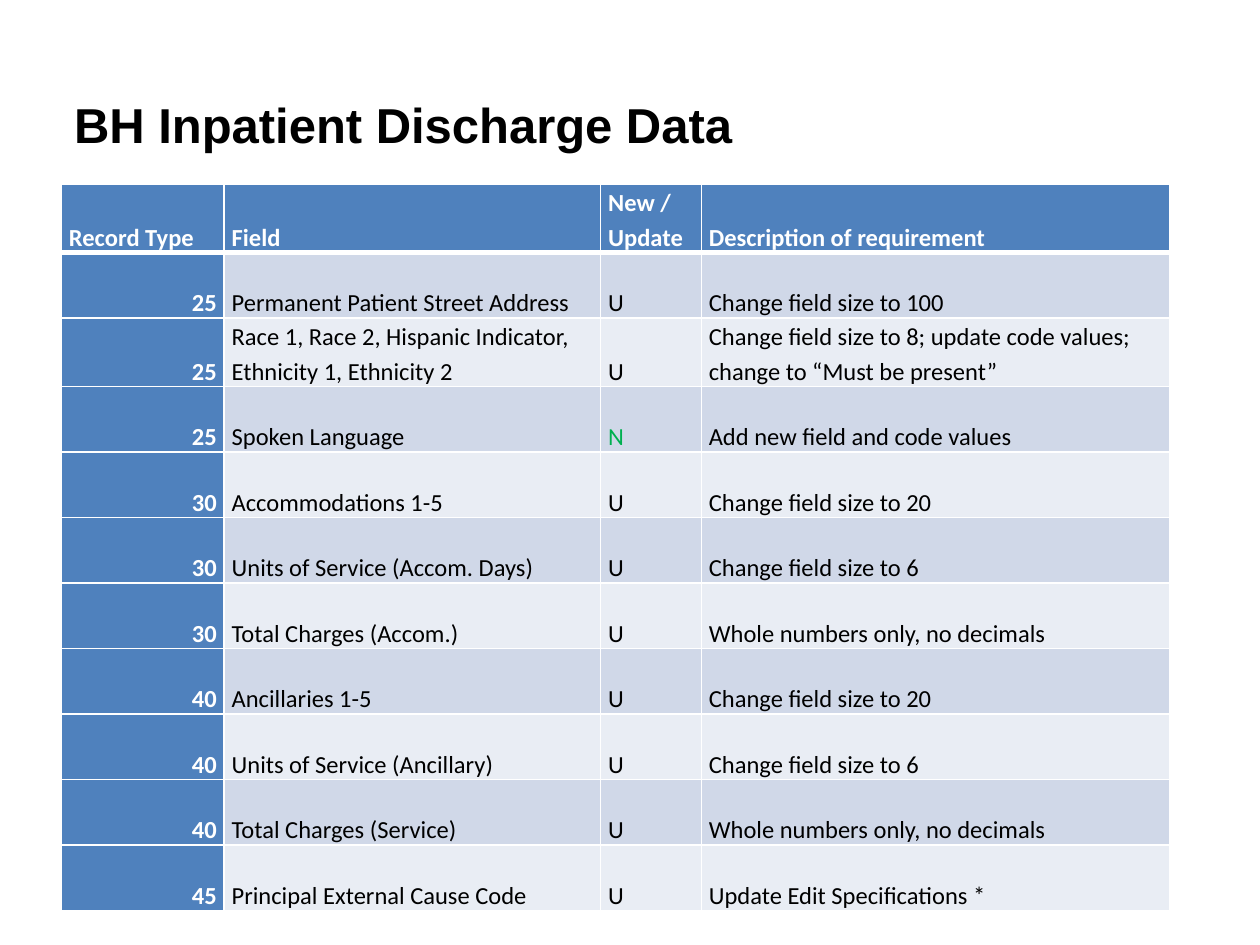
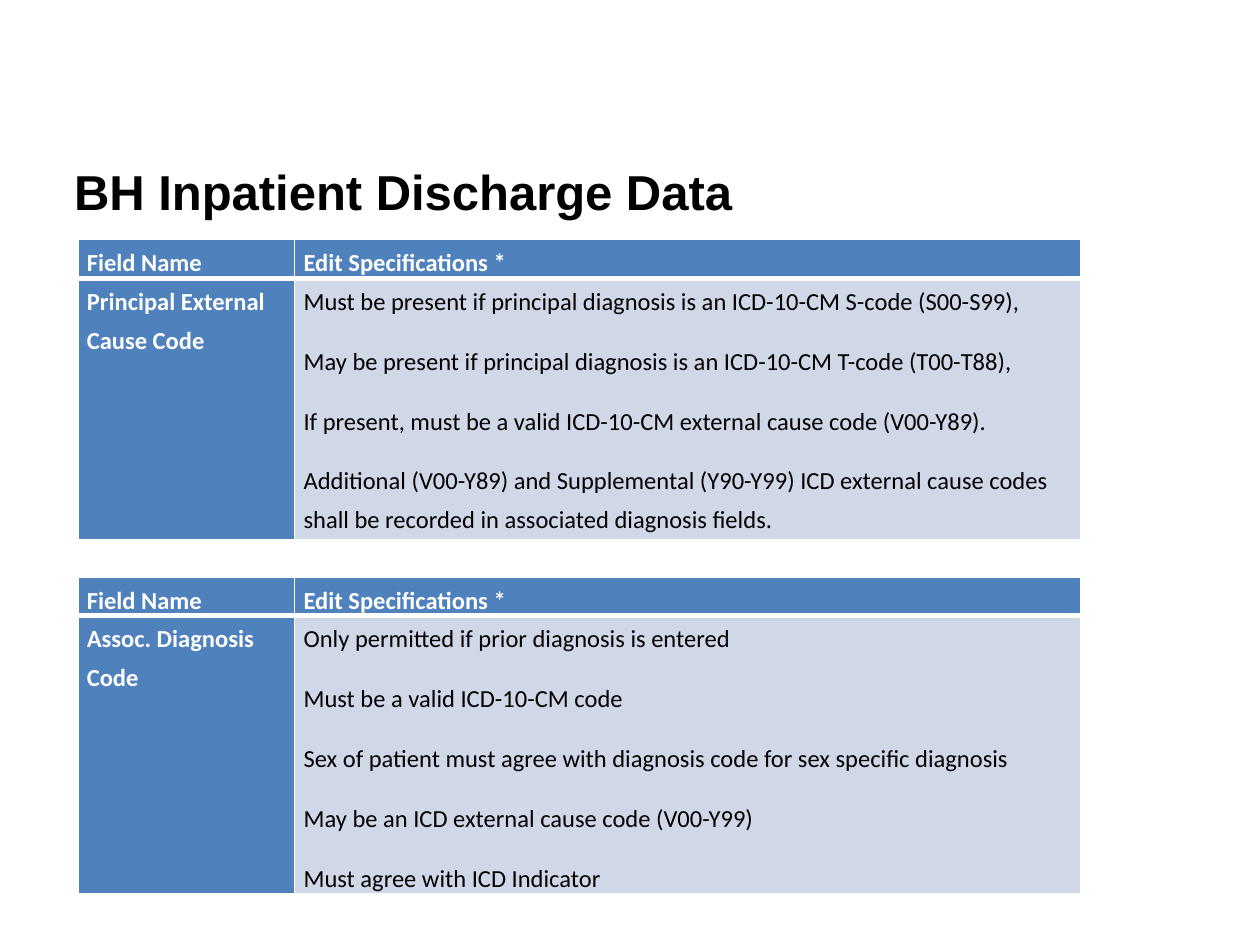
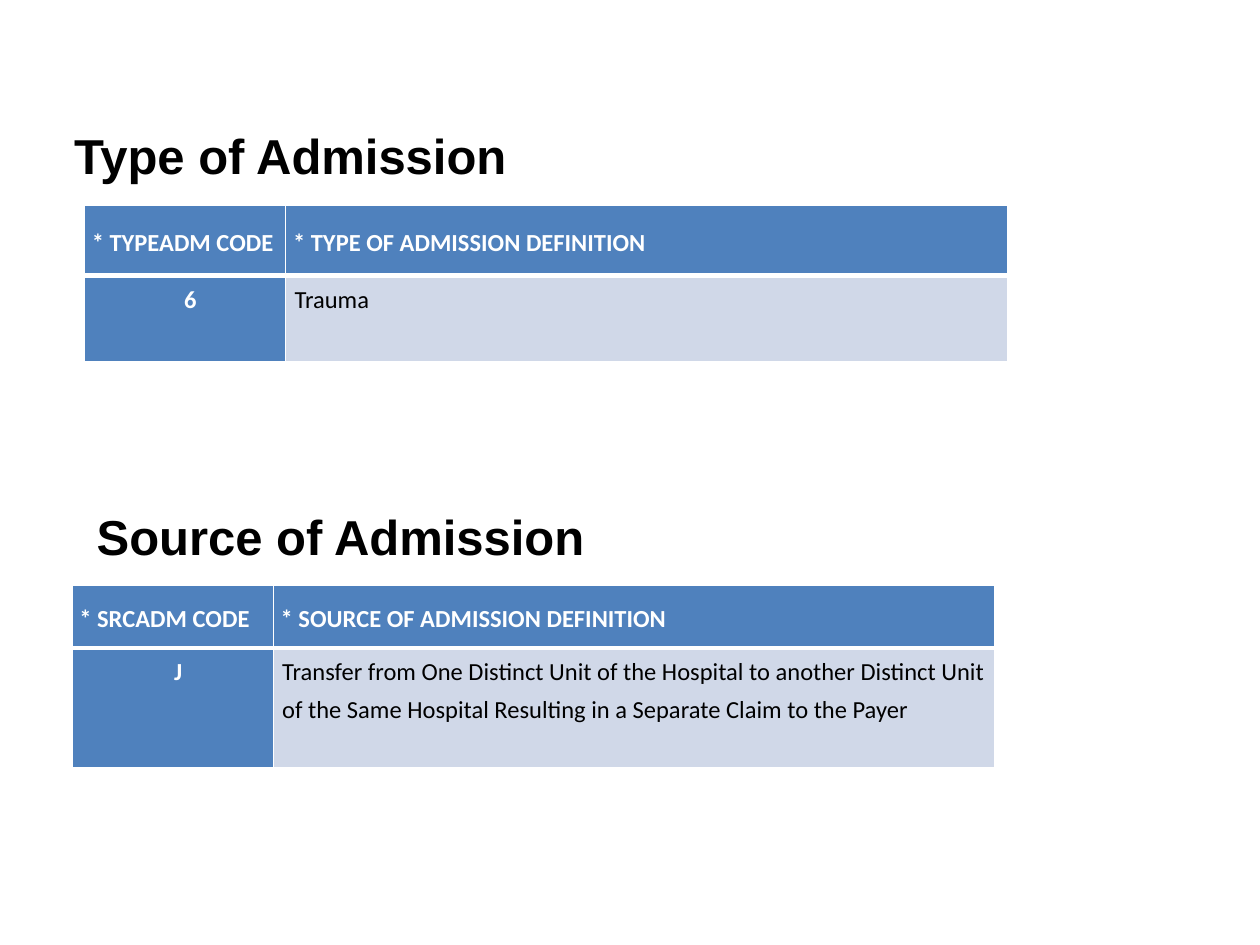
from dataclasses import dataclass

from lxml.etree import SubElement
from pptx import Presentation
from pptx.dml.color import RGBColor
from pptx.enum.text import MSO_ANCHOR as Anchor, MSO_AUTO_SIZE as AutoSize, PP_ALIGN as Align
from pptx.oxml.ns import qn
from pptx.slide import Slide
from pptx.table import _Cell as Cell
from pptx.text.text import TextFrame, _Paragraph as Paragraph
from pptx.util import Cm, Pt


@dataclass(frozen=True)
class Theme:
    heading_font: str = "Arial"
    table_font: str = "Calibri"
    heading_size: int = 28
    table_size: int = 14
    ink: str = "000000"
    paper: str = "FFFFFF"
    accent: str = "4F81BD"
    bands: tuple[str, str] = ("D0D8E8", "E9EDF4")
    new_field: str = "00B050"
    rule: int = 1
    header_rule: int = 3


THEME = Theme()
NEW_FLAG = "N"


@dataclass(frozen=True)
class CellLook:
    """Insets are in cm, paragraph spacing in points."""
    anchor: Anchor = Anchor.TOP
    line_spacing: float = 1.3
    before: int = 3
    after: int = 9
    inset: float = 0.18
    key_inset: float = 0.18
    key_align: Align = Align.LEFT


FIELD_LIST = CellLook(Anchor.BOTTOM, 1.15, 0, 0, 0.15, 0.15, Align.RIGHT)
EDIT_RULES = CellLook()
CODE_HEADER = CellLook(Anchor.MIDDLE, 1.15, 0, 0, 0.15, 0.15)
CODE_BODY = CellLook(after=3, key_inset=0.4, key_align=Align.CENTER)


@dataclass(frozen=True)
class Grid:
    """A table with a header row and a key column; lengths are in cm."""
    left: float
    top: float
    widths: tuple[float, ...]
    header_height: float
    row_height: float
    header: tuple[str, ...]
    rows: tuple[tuple[str, ...], ...]
    header_look: CellLook
    body_look: CellLook


@dataclass(frozen=True)
class Heading:
    """Place of a heading; lengths are in cm."""
    text: str
    left: float
    top: float
    width: float
    height: float
    anchor: Anchor = Anchor.MIDDLE
    bottom_inset: float = 0.13


@dataclass(frozen=True)
class Page:
    title: Heading
    grids: tuple[Grid, ...]
    subheadings: tuple[Heading, ...] = ()


def title(text: str, top: float, height: float, bottom_inset: float = 0.13) -> Heading:
    return Heading(text, 1.24, top, 22.33, height, bottom_inset=bottom_inset)


def edit_grid(top: float, row_height: float, field: str, *rules: str) -> Grid:
    return Grid(1.57, top, (4.37, 15.85), 0.74, row_height,
                ("Field Name", "Edit Specifications *"),
                ((field, "\n".join(rules)),), EDIT_RULES, EDIT_RULES)


def code_grid(left: float, top: float, header_height: float, row_height: float,
              header: tuple[str, str], row: tuple[str, str]) -> Grid:
    return Grid(left, top, (4.06, 14.55), header_height, row_height,
                header, (row,), CODE_HEADER, CODE_BODY)


DISCHARGE_TITLE = "BH Inpatient Discharge Data"

PAGES = (
    Page(
        title(DISCHARGE_TITLE, 0.74, 3.53),
        (Grid(
            1.24, 3.71, (3.28, 7.59, 2.03, 9.45), 1.32, 1.32,
            ("Record Type", "Field", "New / Update", "Description of requirement"),
            (
                ("25", "Permanent Patient Street Address", "U", "Change field size to 100"),
                ("25", "Race 1, Race 2, Hispanic Indicator, Ethnicity 1, Ethnicity 2", "U",
                 "Change field size to 8; update code values; change to “Must be present”"),
                ("25", "Spoken Language", NEW_FLAG, "Add new field and code values"),
                ("30", "Accommodations 1-5", "U", "Change field size to 20"),
                ("30", "Units of Service (Accom. Days)", "U", "Change field size to 6"),
                ("30", "Total Charges (Accom.)", "U", "Whole numbers only, no decimals"),
                ("40", "Ancillaries 1-5", "U", "Change field size to 20"),
                ("40", "Units of Service (Ancillary)", "U", "Change field size to 6"),
                ("40", "Total Charges (Service)", "U", "Whole numbers only, no decimals"),
                ("45", "Principal External Cause Code", "U", "Update Edit Specifications *"),
            ),
            CellLook(Anchor.BOTTOM, 1.15, 0, 0, 0.15, 0.15), FIELD_LIST),),
    ),
    Page(
        title(DISCHARGE_TITLE, 2.97, 1.78),
        (
            edit_grid(
                4.83, 5.26, "Principal External Cause Code",
                "Must be present if principal diagnosis is an ICD-10-CM S-code (S00-S99),",
                "May be present if principal diagnosis is an ICD-10-CM T-code (T00-T88),",
                "If present, must be a valid ICD-10-CM external cause code (V00-Y89).",
                "Additional (V00-Y89) and Supplemental (Y90-Y99) ICD external cause codes "
                "shall be recorded in associated diagnosis fields."),
            edit_grid(
                11.63, 5.44, "Assoc. Diagnosis Code",
                "Only permitted if prior diagnosis is entered",
                "Must be a valid ICD-10-CM code",
                "Sex of patient must agree with diagnosis code for sex specific diagnosis",
                "May be an ICD external cause code (V00-Y99)",
                "Must agree with ICD Indicator"),
        ),
    ),
    Page(
        title("Type of Admission", 2.67, 1.96, bottom_inset=1.17),
        (
            code_grid(1.7, 4.14, 1.42, 1.73,
                      ("* TYPEADM CODE", "* TYPE OF ADMISSION DEFINITION"), ("6", "Trauma")),
            code_grid(1.45, 11.79, 1.27, 2.41,
                      ("* SRCADM CODE", "* SOURCE OF ADMISSION DEFINITION"),
                      ("J", "Transfer from One Distinct Unit of the Hospital to another "
                            "Distinct Unit of the Same Hospital Resulting in a Separate "
                            "Claim to the Payer")),
        ),
        (Heading("Source of Admission", 1.7, 8.89, 17.35, 2.64, Anchor.BOTTOM),),
    ),
)


def add_run(paragraph: Paragraph, text: str, font: str, size: int, color: str, bold: bool) -> None:
    run = paragraph.add_run()
    run.text = text
    run.font.name = font
    run.font.size = Pt(size)
    run.font.bold = bold
    run.font.color.rgb = RGBColor.from_string(color)


def write_heading(frame: TextFrame, heading: Heading) -> None:
    frame.word_wrap = True
    frame.auto_size = AutoSize.NONE
    frame.vertical_anchor = heading.anchor
    frame.margin_bottom = Cm(heading.bottom_inset)
    paragraph = frame.paragraphs[0]
    paragraph.alignment = Align.LEFT
    add_run(paragraph, heading.text, THEME.heading_font, THEME.heading_size, THEME.ink, True)


def place_title(slide: Slide, heading: Heading) -> None:
    holder = slide.shapes.title
    holder.left, holder.top = Cm(heading.left), Cm(heading.top)
    holder.width, holder.height = Cm(heading.width), Cm(heading.height)
    write_heading(holder.text_frame, heading)


def add_subheading(slide: Slide, heading: Heading) -> None:
    box = slide.shapes.add_textbox(Cm(heading.left), Cm(heading.top),
                                   Cm(heading.width), Cm(heading.height))
    write_heading(box.text_frame, heading)


def rule_cell(cell: Cell, row: int) -> None:
    """Draw the four borders; the header's lower edge is the heavy one."""
    properties = cell._tc.get_or_add_tcPr()
    heavy_side = {0: "lnB", 1: "lnT"}.get(row)
    for side in ("lnL", "lnR", "lnT", "lnB"):
        width = THEME.header_rule if side == heavy_side else THEME.rule
        line = SubElement(properties, qn(f"a:{side}"), w=str(Pt(width)))
        fill = SubElement(line, qn("a:solidFill"))
        SubElement(fill, qn("a:srgbClr"), val=THEME.paper)


def fill_cell(cell: Cell, text: str, row: int, column: int, look: CellLook) -> None:
    is_key = row > 0 and column == 0
    is_accent = row == 0 or is_key
    rule_cell(cell, row)
    cell.fill.solid()
    cell.fill.fore_color.rgb = RGBColor.from_string(
        THEME.accent if is_accent else THEME.bands[(row - 1) % 2])
    cell.vertical_anchor = look.anchor
    cell.margin_left = Cm(look.key_inset if is_key else look.inset)
    cell.margin_right = Cm(look.inset)
    cell.margin_top = cell.margin_bottom = 0
    color = THEME.paper if is_accent else THEME.new_field if text == NEW_FLAG else THEME.ink
    for index, line in enumerate(text.split("\n")):
        paragraph = cell.text_frame.add_paragraph() if index else cell.text_frame.paragraphs[0]
        paragraph.alignment = look.key_align if is_key else Align.LEFT
        paragraph.line_spacing = look.line_spacing
        paragraph.space_before = Pt(look.before if index else 0)
        paragraph.space_after = Pt(look.after)
        add_run(paragraph, line, THEME.table_font, THEME.table_size, color, is_accent)


def add_grid(slide: Slide, grid: Grid) -> None:
    heights = (grid.header_height, *[grid.row_height] * len(grid.rows))
    table = slide.shapes.add_table(
        len(heights), len(grid.widths), Cm(grid.left), Cm(grid.top),
        Cm(sum(grid.widths)), Cm(sum(heights))).table
    for column, width in zip(table.columns, grid.widths):
        column.width = Cm(width)
    for row, (height, texts) in enumerate(zip(heights, (grid.header, *grid.rows))):
        table.rows[row].height = Cm(height)
        look = grid.body_look if row else grid.header_look
        for column, text in enumerate(texts):
            fill_cell(table.cell(row, column), text, row, column, look)


def main() -> None:
    deck = Presentation()
    deck.slide_width, deck.slide_height = Cm(25.4), Cm(19.05)
    title_only = deck.slide_layouts.get_by_name("Title Only")
    for page in PAGES:
        slide = deck.slides.add_slide(title_only)
        place_title(slide, page.title)
        for grid in page.grids:
            add_grid(slide, grid)
        for heading in page.subheadings:
            add_subheading(slide, heading)
    deck.save("out.pptx")


if __name__ == "__main__":
    main()
